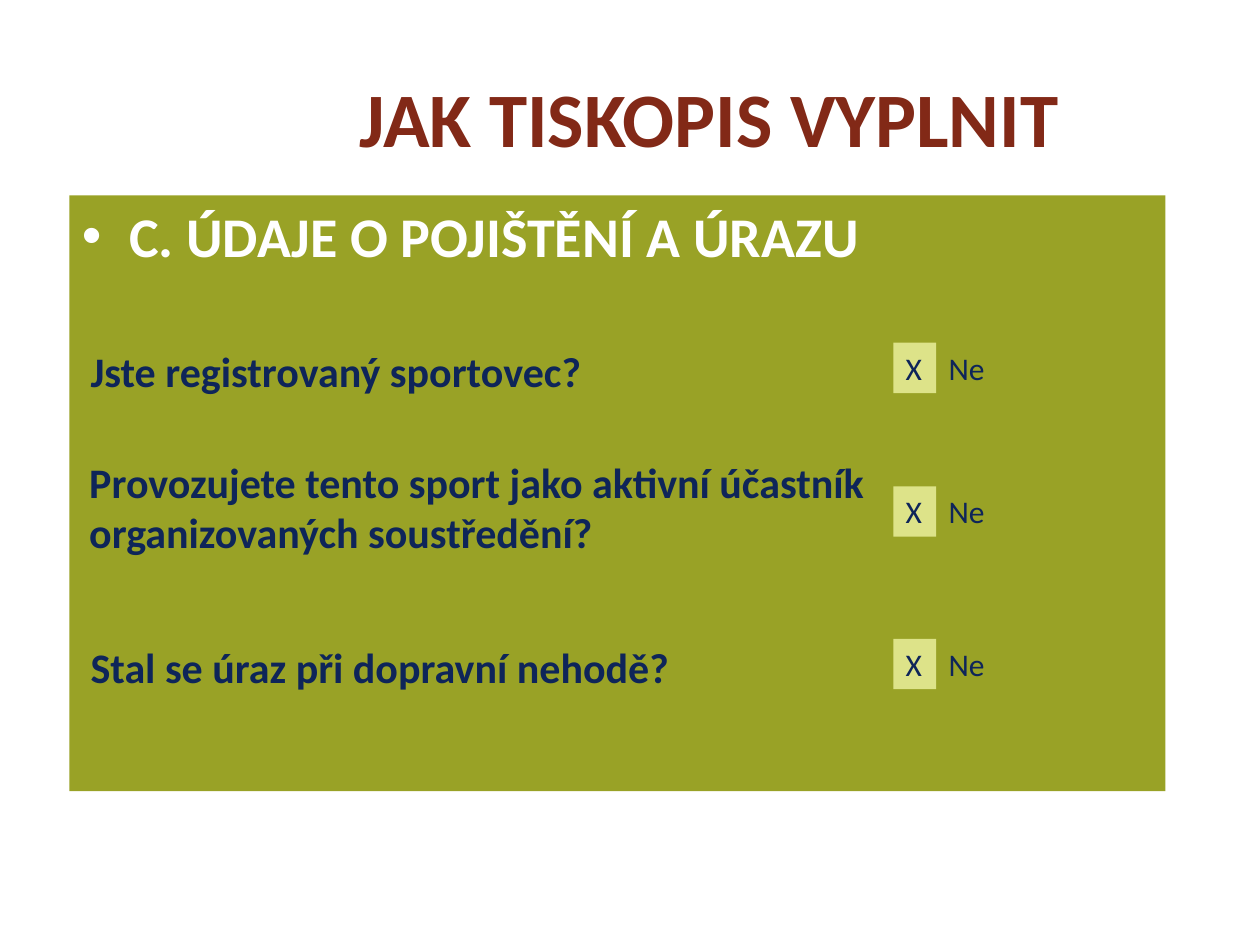
from dataclasses import dataclass

from pptx import Presentation
from pptx.dml.color import RGBColor
from pptx.enum.shapes import MSO_SHAPE
from pptx.enum.text import MSO_ANCHOR, MSO_AUTO_SIZE, PP_ALIGN
from pptx.oxml.xmlchemy import OxmlElement
from pptx.shapes.autoshape import Shape
from pptx.slide import Slide
from pptx.util import Inches, Pt


@dataclass(frozen=True)
class Theme:
    font: str = "Calibri"
    title_color: str = "822917"
    heading_color: str = "FFFFFF"
    text_color: str = "0E2559"
    panel_color: str = "99A226"
    mark_color: str = "DDE389"
    title_size: int = 44
    heading_size: int = 32
    question_size: int = 24
    answer_size: int = 18


@dataclass(frozen=True)
class Area:
    left: float
    top: float
    width: float
    height: float

    def lengths(self) -> list[int]:
        return [Inches(value) for value in (self.left, self.top, self.width, self.height)]


@dataclass(frozen=True)
class Question:
    text: str
    area: Area
    answer_top: float
    wrap: bool = True
    fill: str | None = None
    top_inset: float = 0.05


THEME = Theme()
QUESTIONS = [
    Question("Jste registrovaný sportovec?", Area(0.62, 2.69, 4.31, 0.5), 2.72, wrap=False),
    Question(
        "Provozujete tento sport jako aktivní účastník organizovaných soustředění?",
        Area(0.61, 3.57, 6.48, 0.91),
        3.86,
    ),
    Question(
        "Stal se úraz při dopravní nehodě?",
        Area(0.62, 4.85, 5.38, 0.89),
        5.07,
        fill=THEME.panel_color,
        top_inset=0.24,
    ),
]


def write(shape: Shape, text: str, size: int, color: str, bold: bool, align: PP_ALIGN = PP_ALIGN.LEFT) -> None:
    shape.text_frame.text = text
    para = shape.text_frame.paragraphs[0]
    para.alignment = align
    para.font.name = THEME.font
    para.font.size = Pt(size)
    para.font.bold = bold
    para.font.color.rgb = RGBColor.from_string(color)


def place(shape: Shape, area: Area) -> None:
    shape.left, shape.top, shape.width, shape.height = area.lengths()


def add_label(
    page: Slide, text: str, area: Area, size: int, bold: bool = False,
    fill: str | None = None, wrap: bool = True, top_inset: float = 0.05,
) -> None:
    if fill:
        box = page.shapes.add_shape(MSO_SHAPE.RECTANGLE, *area.lengths())
        box.shadow.inherit = False
        box.fill.solid()
        box.fill.fore_color.rgb = RGBColor.from_string(fill)
        box.line.fill.background()
    else:
        box = page.shapes.add_textbox(*area.lengths())
    write(box, text, size, THEME.text_color, bold)
    frame = box.text_frame
    frame.word_wrap = wrap
    frame.vertical_anchor = MSO_ANCHOR.TOP
    frame.margin_top = Inches(top_inset)


def add_question(page: Slide, question: Question) -> None:
    add_label(
        page, question.text, question.area, THEME.question_size, bold=True,
        fill=question.fill, wrap=question.wrap, top_inset=question.top_inset,
    )
    top = question.answer_top
    add_label(page, "X", Area(7.09, top, 0.34, 0.4), THEME.answer_size, fill=THEME.mark_color)
    add_label(page, "Ne", Area(7.43, top, 0.49, 0.4), THEME.answer_size, wrap=False)


def fill_title(page: Slide) -> None:
    title = page.shapes.title
    place(title, Area(1.76, 0.3, 7.74, 1.25))
    write(title, "JAK TISKOPIS VYPLNIT", THEME.title_size, THEME.title_color, True, PP_ALIGN.CENTER)
    title.text_frame.vertical_anchor = MSO_ANCHOR.MIDDLE


def fill_panel(page: Slide) -> None:
    panel = page.placeholders[1]
    place(panel, Area(0.55, 1.55, 8.7, 4.73))
    panel.fill.solid()
    panel.fill.fore_color.rgb = RGBColor.from_string(THEME.panel_color)
    panel.text_frame.auto_size = MSO_AUTO_SIZE.NONE
    panel.text_frame.text = ""
    properties = panel.text_frame.paragraphs[0]._p.get_or_add_pPr()
    properties.set("marL", str(Inches(0.38)))
    properties.set("indent", str(Inches(-0.38)))
    properties.append(OxmlElement("a:buNone"))
    write(panel, "C. ÚDAJE O POJIŠTĚNÍ A ÚRAZU", THEME.heading_size, THEME.heading_color, True)
    panel.text_frame.paragraphs[0].space_before = Pt(0)


def main() -> None:
    deck = Presentation()
    deck.slide_width, deck.slide_height = Inches(10), Inches(7.5)
    page = deck.slides.add_slide(deck.slide_layouts[1])
    fill_title(page)
    fill_panel(page)
    for question in QUESTIONS:
        add_question(page, question)
    deck.save("out.pptx")


if __name__ == "__main__":
    main()
